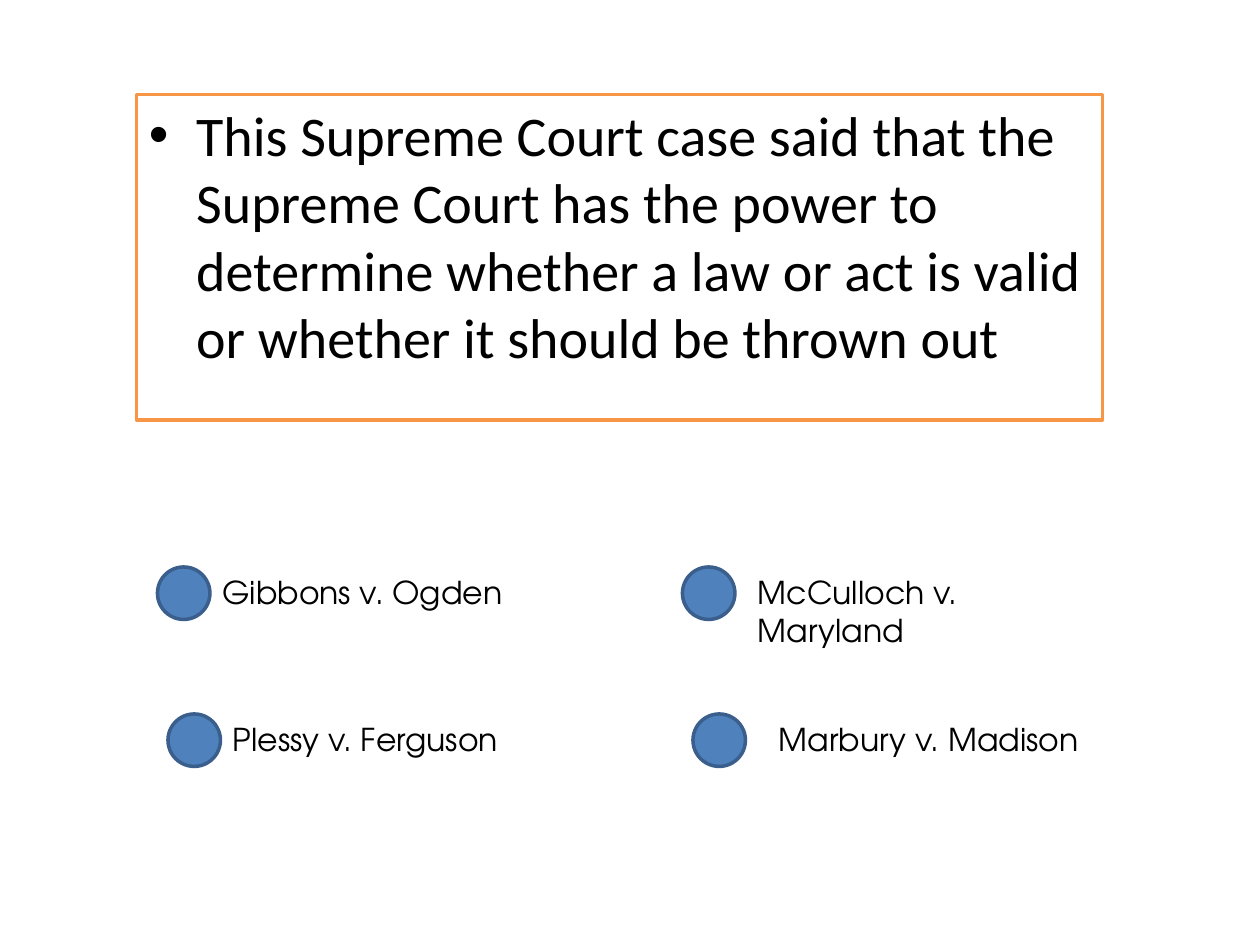
from dataclasses import dataclass

from lxml.etree import SubElement
from pptx import Presentation
from pptx.dml.color import RGBColor
from pptx.enum.shapes import MSO_SHAPE
from pptx.enum.text import MSO_ANCHOR, MSO_AUTO_SIZE, PP_ALIGN
from pptx.oxml.ns import qn
from pptx.shapes.autoshape import Shape
from pptx.slide import Slide
from pptx.text.text import _Paragraph
from pptx.util import Pt

QUESTION = ("This Supreme Court case said that the Supreme Court has the power to "
            "determine whether a law or act is valid or whether it should be thrown out")
QUESTION_FONT = {"name": "Calibri", "size": Pt(32)}
ANSWER_FONT = {"name": "TeX Gyre Adventor", "size": Pt(18)}
FRAME_FORMAT = {"word_wrap": True, "vertical_anchor": MSO_ANCHOR.TOP}
CIRCLE_SIZE = 30
ROW_TOPS = (324, 408)


@dataclass(frozen=True)
class Answer:
    text: str
    row: int
    circle_left: float
    text_left: float
    text_width: float


ANSWERS = (
    Answer("Gibbons v. Ogden", 0, 90, 120, 180),
    Answer("McCulloch v. Maryland", 0, 390, 426, 212.4),
    Answer("Plessy v. Ferguson", 1, 96, 126, 198),
    Answer("Marbury v. Madison", 1, 396, 438, 198),
)


def color(value: str) -> RGBColor:
    return RGBColor.from_string(value)


def set_values(target: object, values: dict) -> None:
    for name, value in values.items():
        setattr(target, name, value)


def add_figure(page: Slide, kind: MSO_SHAPE, left: float, top: float, width: float,
               height: float, fill: str, line: str) -> Shape:
    figure = page.shapes.add_shape(kind, Pt(left), Pt(top), Pt(width), Pt(height))
    figure.shadow.inherit = False
    figure.fill.solid()
    figure.fill.fore_color.rgb = color(fill)
    figure.line.color.rgb = color(line)
    figure.line.width = Pt(2)
    return figure


def write(box: Shape, text: str, font: dict) -> _Paragraph:
    set_values(box.text_frame, FRAME_FORMAT)
    para = box.text_frame.paragraphs[0]
    para.alignment = PP_ALIGN.LEFT
    span = para.add_run()
    span.text = text
    set_values(span.font, font)
    span.font.color.rgb = color("000000")
    return para


def add_bullet(para: _Paragraph) -> None:
    properties = para._p.get_or_add_pPr()
    properties.set("marL", str(Pt(27)))
    properties.set("indent", str(Pt(-27)))
    spacing = SubElement(properties, qn("a:spcBef"))
    SubElement(spacing, qn("a:spcPct"), val="20000")
    SubElement(properties, qn("a:buFont"), typeface="Arial")
    SubElement(properties, qn("a:buChar"), char="•")


def add_question(page: Slide) -> None:
    box = add_figure(page, MSO_SHAPE.RECTANGLE, 78, 54, 552, 186, "FFFFFF", "F79646")
    add_bullet(write(box, QUESTION, QUESTION_FONT))


def add_answer(page: Slide, answer: Answer) -> None:
    top = ROW_TOPS[answer.row]
    box = page.shapes.add_textbox(Pt(answer.text_left), Pt(top), Pt(answer.text_width), Pt(29))
    write(box, answer.text, ANSWER_FONT)
    box.text_frame.auto_size = MSO_AUTO_SIZE.SHAPE_TO_FIT_TEXT
    add_figure(page, MSO_SHAPE.OVAL, answer.circle_left, top, CIRCLE_SIZE, CIRCLE_SIZE,
               "4F81BD", "3A5F8C")


def main() -> None:
    deck = Presentation()
    set_values(deck, {"slide_width": Pt(720), "slide_height": Pt(540)})
    page = deck.slides.add_slide(deck.slide_layouts[6])

    # Question panel
    add_question(page)

    # Answer choices
    for answer in ANSWERS:
        add_answer(page, answer)

    deck.save("out.pptx")


if __name__ == "__main__":
    main()
